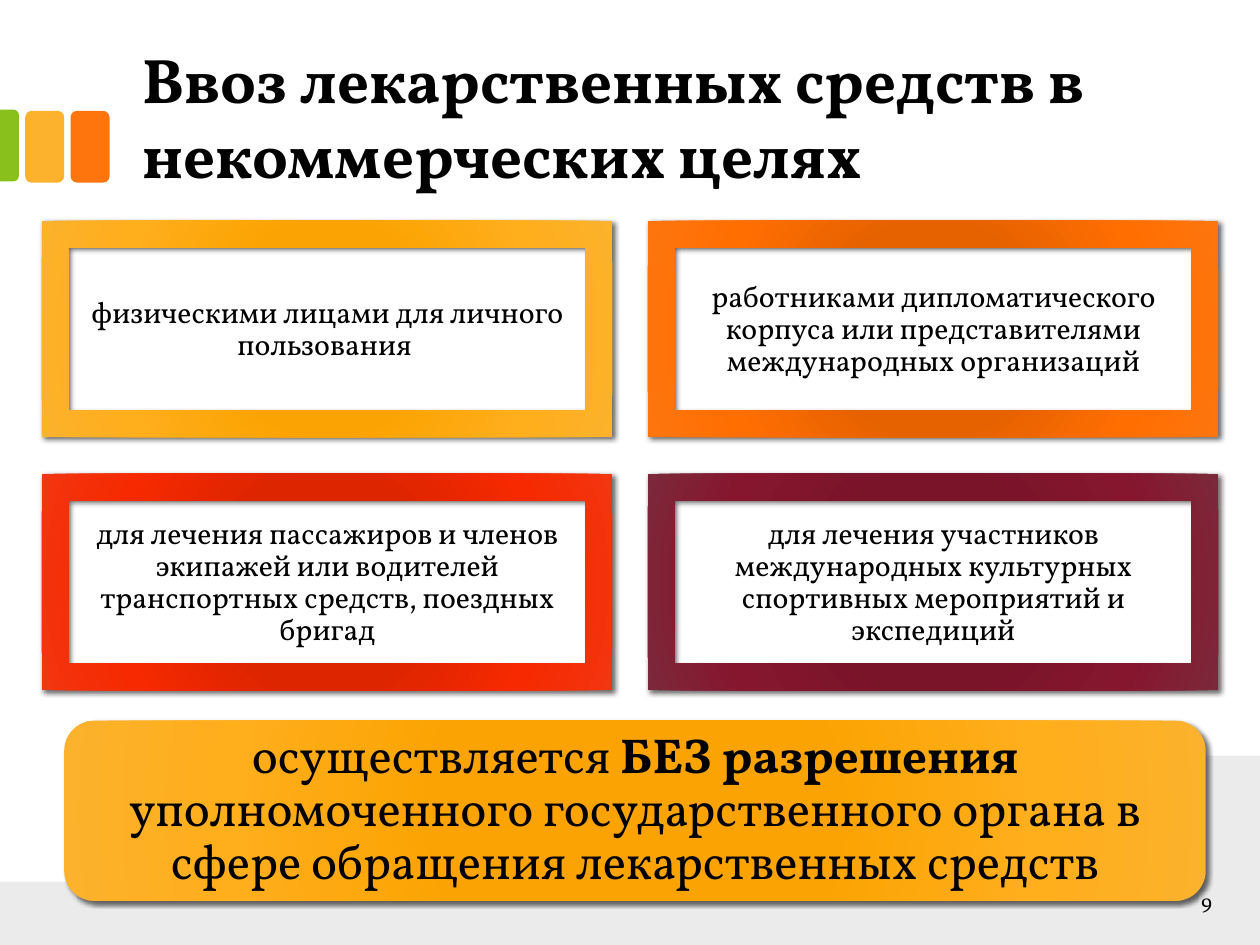
from lxml import etree
from pptx import Presentation
from pptx import util as u
from pptx.dml.color import RGBColor
from pptx.enum import shapes, text
from pptx.oxml import ns

FONT = "Vollkorn"
COLORS = {"text": "000000", "orange": "FE750E", "yellow": "FCB22C", "green": "89C01C"}
GRADIENTS = {
    "yellow": ("FDA300", "FBA302", "FFAE1C", "FCB22C"),
    "orange": ("E66200", "E66200", "FF6E01", "FE750E"),
    "red": ("DD2500", "DD2500", "F62900", "F23610"),
    "wine": ("7C1027", "791429", "86162E", "7C283A"),
}
STOPS = (0, 34, 70, 100)
CARDS = [
    ("yellow", "физическими лицами для личного пользования "),
    ("orange", "работниками дипломатического корпуса или представителями "
               "международных организаций"),
    ("red", "для лечения пассажиров и членов экипажей или водителей "
            "транспортных средств, поездных бригад"),
    ("wine", "для лечения участников международных культурных спортивных "
             "мероприятий и экспедиций"),
]
SHAPE = shapes.MSO_SHAPE
ALIGN = text.PP_ALIGN
ANCHOR = text.MSO_ANCHOR


def add_child(parent, tag, **attributes):
    values = {name: str(value) for name, value in attributes.items()}
    return etree.SubElement(parent, ns.qn(tag), values)


def add_color(parent, color, alpha=None):
    node = add_child(parent, "a:srgbClr", val=color)
    if alpha is not None:
        add_child(node, "a:alpha", val=alpha * 1000)


def curve(start, first, second, end, steps=24):
    points = []
    for step in range(1, steps + 1):
        t = step / steps
        weights = ((1 - t) ** 3, 3 * t * (1 - t) ** 2, 3 * t * t * (1 - t), t ** 3)
        points.append(tuple(sum(w * p[axis] for w, p in zip(weights, (start, first, second, end)))
                            for axis in (0, 1)))
    return points


def add_wave(slide, points, alpha):
    builder = slide.shapes.build_freeform(*points[0], scale=u.Inches(1))
    builder.add_line_segments(points[1:], close=True)
    shape = builder.convert_to_shape()
    shape.shadow.inherit = False
    shape.line.fill.background()
    shape.fill.solid()
    shape.fill.fore_color.rgb = RGBColor.from_string(COLORS["text"])
    color = shape._element.spPr.find(".//" + ns.qn("a:srgbClr"))
    add_child(color, "a:alpha", val=alpha * 1000)


def add_plain_shape(slide, kind, box):
    shape = slide.shapes.add_shape(kind, *map(u.Inches, box))
    shape.shadow.inherit = False
    shape.line.fill.background()
    return shape


def add_tab(slide, kind, box, color):
    shape = add_plain_shape(slide, kind, box)
    shape.fill.solid()
    shape.fill.fore_color.rgb = RGBColor.from_string(COLORS[color])
    return shape


def add_glow_shape(slide, kind, box, gradient):
    shape = add_plain_shape(slide, kind, box)
    shape.fill.background()
    properties = shape._element.spPr
    fill = etree.Element(ns.qn("a:gradFill"), rotWithShape="1")
    stops = add_child(fill, "a:gsLst")
    for position, color in zip(STOPS, GRADIENTS[gradient]):
        add_color(add_child(stops, "a:gs", pos=position * 1000), color)
    radial = add_child(fill, "a:path", path="circle")
    add_child(radial, "a:fillToRect", l=100000, t=100000, r=100000, b=100000)
    properties.replace(properties.find(ns.qn("a:noFill")), fill)
    shadow = add_child(properties.find(ns.qn("a:effectLst")), "a:outerShdw",
                       blurRad=u.Pt(3), dist=u.Pt(2), dir=45 * 60000,
                       algn="tl", rotWithShape=0)
    add_color(shadow, COLORS["text"], 60)


def add_text(slide, box, runs, size, align=ALIGN.LEFT, anchor=ANCHOR.MIDDLE,
             insets=(0.13, 0.07), spacing=None):
    frame = slide.shapes.add_textbox(*map(u.Inches, box)).text_frame
    frame.word_wrap = True
    frame.vertical_anchor = anchor
    frame.margin_left = frame.margin_right = u.Inches(insets[0])
    frame.margin_top = frame.margin_bottom = u.Inches(insets[1])
    paragraph = frame.paragraphs[0]
    paragraph.alignment = align
    paragraph.line_spacing = spacing
    paragraph.font.name = FONT
    paragraph.font.size = u.Pt(size)
    paragraph.font.color.rgb = RGBColor.from_string(COLORS["text"])
    for words, bold in runs:
        run = paragraph.add_run()
        run.text = words
        run.font.bold = bold


def add_background(slide):
    lower = [(10, 6.18), (10, 7.5), (0, 7.5), (0, 6.75)]
    lower += curve((0, 6.75), (2.64, 6.83), (7.82, 6.55), (10, 6.18))
    add_wave(slide, lower, 8)
    ribbon = [(10, 5.91), (10, 6.12)]
    ribbon += curve((10, 6.12), (9.42, 6.23), (8.62, 6.33), (7.72, 6.41))
    ribbon += curve((7.72, 6.41), (5.23, 6.63), (1.93, 6.77), (0, 6.71))
    ribbon.append((0, 6.57))
    ribbon += curve((0, 6.57), (4.89, 6.62), (7.28, 6.27), (10, 5.91))
    add_wave(slide, ribbon, 5)


def add_tabs(slide):
    for left, color in ((0.56, "orange"), (0.2, "yellow")):
        add_tab(slide, SHAPE.ROUNDED_RECTANGLE, (left, 0.88, 0.31, 0.57), color)
    edge = add_tab(slide, SHAPE.ROUND_2_SAME_RECTANGLE, (-0.21, 1.08, 0.57, 0.15), "green")
    edge.rotation = 90
    edge.adjustments[0] = 0.29


def add_cards(slide):
    for index, (gradient, words) in enumerate(CARDS):
        row, column = divmod(index, 2)
        left, top = 0.33 + column * 4.81, 1.75 + row * 2.01
        add_glow_shape(slide, SHAPE.FRAME, (left, top, 4.53, 1.72), gradient)
        add_text(slide, (left + 0.22, top + 0.22, 4.1, 1.29), [(words, False)], 17,
                 ALIGN.CENTER, insets=(0.07, 0.07), spacing=0.9)


def add_conclusion(slide):
    add_glow_shape(slide, SHAPE.ROUNDED_RECTANGLE, (0.51, 5.72, 9.06, 1.43), "yellow")
    runs = [
        ("осуществляется ", False),
        ("БЕЗ разрешения ", True),
        ("уполномоченного государственного органа в сфере обращения "
         "лекарственных средств", False),
    ]
    add_text(slide, (0.58, 5.79, 8.92, 1.29), runs, 28, ALIGN.CENTER,
             insets=(0.12, 0.12), spacing=0.9)


def main():
    presentation = Presentation()
    presentation.slide_width = u.Inches(10)
    presentation.slide_height = u.Inches(7.5)
    slide = presentation.slides.add_slide(presentation.slide_layouts[6])
    add_background(slide)
    add_tabs(slide)
    add_text(slide, (1, 0.17, 8, 1.42),
             [("Ввоз лекарственных средств в некоммерческих целях", True)],
             36, anchor=ANCHOR.BOTTOM)
    add_text(slide, (9.08, 7.05, 0.67, 0.2), [("9", False)], 12, ALIGN.RIGHT)
    add_cards(slide)
    add_conclusion(slide)
    presentation.save("out.pptx")


if __name__ == "__main__":
    main()
